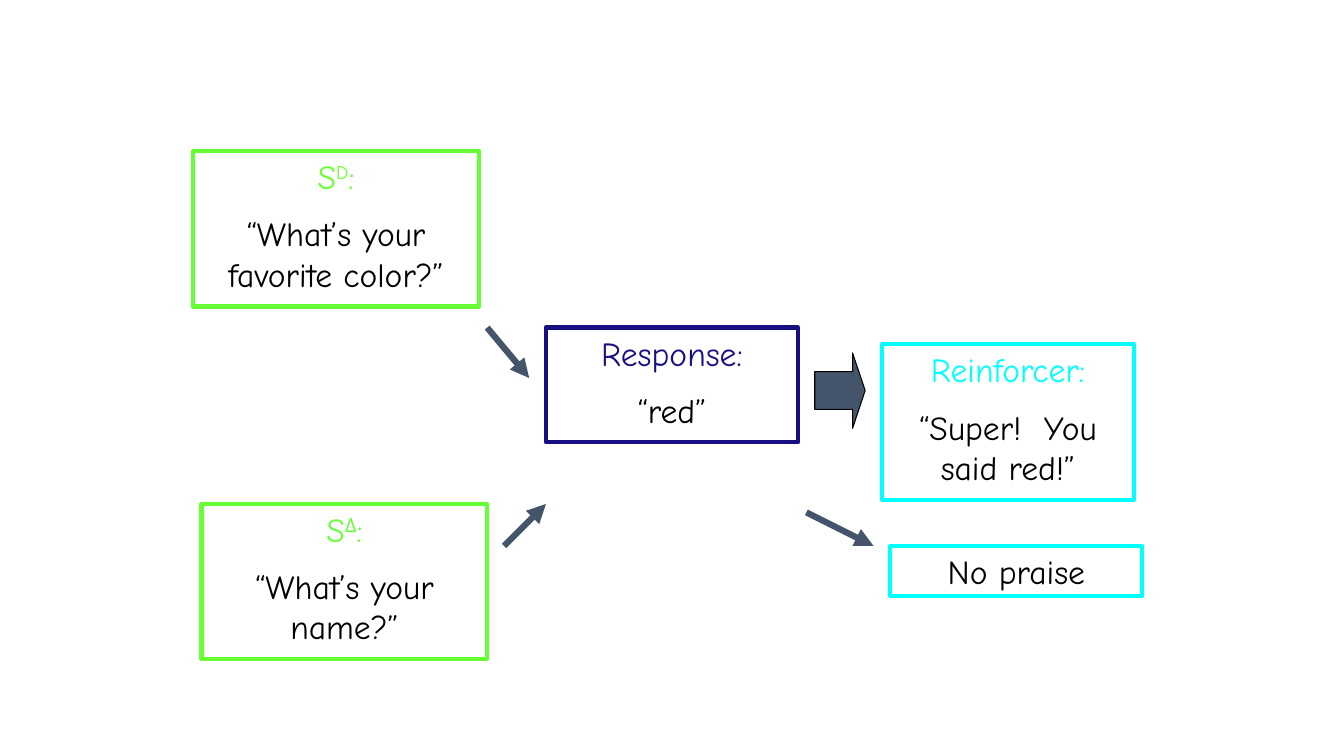
import pptx
import pptx.dml.color
import pptx.enum.shapes
import pptx.enum.text
import pptx.oxml.ns
import pptx.util
import lxml.etree

Pt = pptx.util.Pt
SHAPE = pptx.enum.shapes.MSO_SHAPE
NAVY, CYAN, GREEN = "190F84", "00FFFF", "66FF33"
SLATE, BLACK = "44546A", "000000"


def color(code):
    return pptx.dml.color.RGBColor.from_string(code)


def write(para, text, size=24, font="Comic Neue", ink=BLACK, raised=False):
    run = para.add_run()
    run.text = text
    run.font.size = Pt(size)
    run.font.name = font
    run.font.color.rgb = color(ink)
    if raised:
        run.font._element.set("baseline", "30000")


class Board:
    """Holds the slide and the style shared by its parts."""
    edge = 3
    stroke = 4.5
    gap = 12

    def __init__(self, slide):
        self.slide = slide

    def shape(self, kind, x, y, w, h, line, width, fill=None):
        item = self.slide.shapes.add_shape(kind, Pt(x), Pt(y), Pt(w), Pt(h))
        item.shadow.inherit = False
        if fill:
            item.fill.solid()
            item.fill.fore_color.rgb = color(fill)
        else:
            item.fill.background()
        item.line.color.rgb = color(line)
        item.line.width = Pt(width)
        return item

    def box(self, x, y, w, h, hue, head, body):
        """Framed box; head is a list of (text, raised) parts."""
        item = self.shape(SHAPE.RECTANGLE, x, y, w, h, hue, self.edge)
        frame = item.text_frame
        frame.word_wrap = True
        frame.vertical_anchor = pptx.enum.text.MSO_ANCHOR.TOP
        para = frame.paragraphs[0]
        if head:
            for text, raised in head:
                write(para, text, ink=hue, raised=raised)
            para = frame.add_paragraph()
            para.space_before = Pt(self.gap)
        write(para, body)
        for para in frame.paragraphs:
            para.alignment = pptx.enum.text.PP_ALIGN.CENTER

    def block(self, x, y, w, h):
        """Broad arrow with a short head."""
        item = self.shape(SHAPE.RIGHT_ARROW, x, y, w, h, BLACK, 0.75, SLATE)
        item.adjustments[0] = 0.5
        item.adjustments[1] = 0.25

    def arrow(self, x1, y1, x2, y2):
        item = self.slide.shapes.add_connector(
            pptx.enum.shapes.MSO_CONNECTOR.STRAIGHT,
            Pt(x1), Pt(y1), Pt(x2), Pt(y2))
        item.line.color.rgb = color(SLATE)
        item.line.width = Pt(self.stroke)
        qn = pptx.oxml.ns.qn
        tip = lxml.etree.SubElement(item.line._get_or_add_ln(), qn("a:tailEnd"))
        tip.set("type", "triangle")
        lxml.etree.SubElement(item._element.spPr, qn("a:effectLst"))


def main():
    deck = pptx.Presentation()
    deck.slide_width, deck.slide_height = Pt(960), Pt(540)
    board = Board(deck.slides.add_slide(deck.slide_layouts[6]))

    # Boxes: stimuli, response, outcomes
    for x, y, w, h, hue, head, body in (
        (138, 108, 204, 111, GREEN,
         [("S", False), ("D", True), (":", False)],
         "“What’s your favorite color?”"),
        (144, 360, 204, 111, GREEN,
         [("S", False), ("Δ", True), (":", False)],
         "“What’s your name?”"),
        (390, 234, 180, 82, NAVY, [("Response:", False)], "“red”"),
        (630, 246, 180, 111, CYAN, [("Reinforcer:", False)],
         "“Super!  You said red!”"),
        (636, 390, 180, 36, CYAN, [], "No praise"),
    ):
        board.box(x, y, w, h, hue, head, body)

    # Arrows between the boxes
    board.block(582, 252, 36, 54)
    for ends in ((348, 234, 378, 270), (360, 390, 390, 360),
                 (576, 366, 624, 390)):
        board.arrow(*ends)

    deck.save("out.pptx")


if __name__ == "__main__":
    main()
